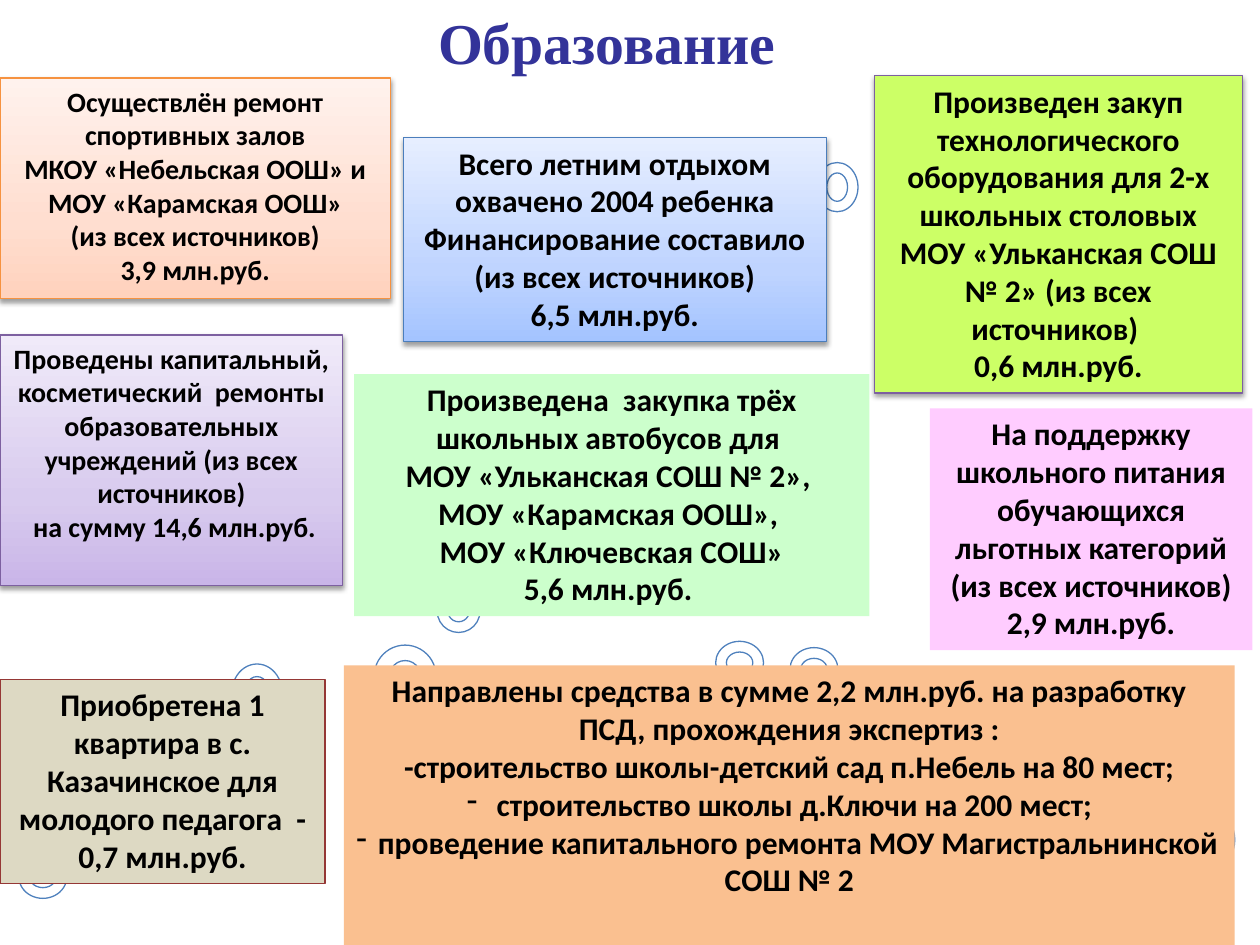
"""Build the education spending slide."""
from copy import deepcopy

from lxml import etree
from pptx import Presentation
from pptx.dml.color import RGBColor
from pptx.enum.shapes import MSO_SHAPE
from pptx.enum.text import MSO_ANCHOR, MSO_AUTO_SIZE, PP_ALIGN
from pptx.oxml.ns import qn
from pptx.util import Inches, Pt

RECT, DONUT = MSO_SHAPE.RECTANGLE, MSO_SHAPE.DONUT
TOP, CENTER, NO_FIT = MSO_ANCHOR.TOP, PP_ALIGN.CENTER, MSO_AUTO_SIZE.NONE

BLACK = RGBColor(0x00, 0x00, 0x00)
WHITE = RGBColor(0xFF, 0xFF, 0xFF)
INDIGO = RGBColor(0x33, 0x33, 0x99)
RING_BLUE = RGBColor(0x4F, 0x81, 0xBD)
BLUE = RGBColor(0x4B, 0x7E, 0xBC)
ORANGE = RGBColor(0xF6, 0x92, 0x40)
PURPLE = RGBColor(0x7D, 0x60, 0xA0)
DARK_RED = RGBColor(0x95, 0x37, 0x35)
LIME = RGBColor(0xCC, 0xFF, 0x66)
MINT = RGBColor(0xCC, 0xFF, 0xCC)
PINK = RGBColor(0xFF, 0xCC, 0xFF)
PEACH = RGBColor(0xFA, 0xC0, 0x90)
TAN = RGBColor(0xDD, 0xD9, 0xC3)
ORANGE_FADE = [RGBColor(0xFF, 0xD2, 0xBD), RGBColor(0xFF, 0xDE, 0xD0), RGBColor(0xFF, 0xF2, 0xED)]
PURPLE_FADE = [RGBColor(0xC9, 0xB5, 0xE8), RGBColor(0xD8, 0xCB, 0xEE), RGBColor(0xF0, 0xEA, 0xF9)]
BLUE_FADE = [RGBColor(0xA4, 0xC4, 0xFF), RGBColor(0xBF, 0xD4, 0xFF), RGBColor(0xE6, 0xEE, 0xFF)]
FADE_POSITIONS = (0, 0.35, 1)

TITLE = "Образование"
RINGS = [
    (1.84, 5.27, 0.4, 0.46), (2.97, 5.12, 0.49, 0.49), (6.48, 1.29, 0.33, 0.39),
    (6.27, 5.14, 0.38, 0.34), (5.68, 5.09, 0.38, 0.34), (3.47, 4.68, 0.34, 0.34),
    (0.15, 6.79, 0.38, 0.34), (9.3, 6.4, 0.5, 0.53),
]
BULLET = "• "
CARDS = [
    dict(at=(0, 0.62, 3.1, 1.75), fill=ORANGE_FADE, line=ORANGE, shadow=True, size=16, text=[
        "Осуществлён ремонт спортивных залов",
        "МКОУ «Небельская ООШ» и МОУ «Карамская ООШ»",
        "(из всех источников)",
        "3,9 млн.руб."]),
    dict(at=(6.94, 0.6, 2.92, 2.52), fill=LIME, line=PURPLE, shadow=True, size=18, text=[
        "Произведен закуп технологического оборудования для 2-х школьных столовых "
        "МОУ «Ульканская СОШ № 2» (из всех источников) ",
        "0,6 млн.руб."]),
    dict(at=(0, 2.66, 2.72, 1.99), fill=PURPLE_FADE, line=PURPLE, shadow=True, size=16, text=[
        "Проведены капитальный, косметический  ремонты образовательных учреждений "
        "(из всех источников)",
        " на сумму 14,6 млн.руб."]),
    dict(at=(3.2, 1.09, 3.36, 1.62), fill=BLUE_FADE, line=BLUE, shadow=True, size=18, text=[
        "Всего летним отдыхом охвачено 2004 ребенка",
        "Финансирование составило (из всех источников)",
        "6,5 млн.руб."]),
    dict(at=(2.73, 5.28, 7.07, 2.22), fill=PEACH, line=None, shadow=False, size=18, text=[
        "Направлены средства в сумме 2,2 млн.руб. на разработку ПСД, прохождения экспертиз :",
        "-строительство школы-детский сад п.Небель на 80 мест;",
        BULLET + "строительство школы д.Ключи на 200 мест;",
        BULLET + " проведение капитального ремонта МОУ Магистральнинской СОШ № 2"]),
    dict(at=(7.38, 3.24, 2.56, 1.92), fill=PINK, line=None, shadow=False, size=18, text=[
        "На поддержку школьного питания обучающихся льготных категорий",
        " (из всех источников) ",
        "2,9 млн.руб."]),
    dict(at=(2.81, 2.97, 4.09, 1.92), fill=MINT, line=None, shadow=False, size=18, text=[
        "Произведена  закупка трёх школьных автобусов для ",
        "МОУ «Ульканская СОШ № 2», ",
        "МОУ «Карамская ООШ», ",
        "МОУ «Ключевская СОШ»",
        "5,6 млн.руб. "]),
    dict(at=(0, 5.39, 2.58, 1.62), fill=TAN, line=DARK_RED, shadow=False, size=18, text=[
        "Приобретена 1 квартира в с. Казачинское для молодого педагога  - 0,7 млн.руб."]),
]


def add_shape(s, kind, at, fill, line):
    sp = s.shapes.add_shape(kind, *map(Inches, at))
    sp.shadow.inherit = False
    if isinstance(fill, list):
        fade(sp, fill)
    else:
        sp.fill.solid()
        sp.fill.fore_color.rgb = fill
    if line is None:
        sp.line.fill.background()
    else:
        sp.line.color.rgb = line
        sp.line.width = Pt(0.75)
    return sp


def fade(sp, colors):
    sp.fill.gradient()
    sp.fill.gradient_angle = 90
    first = next(sp._element.spPr.iter(qn("a:gs")))
    first.addnext(deepcopy(first))
    for stop, position, color in zip(sp.fill.gradient_stops, FADE_POSITIONS, colors):
        stop.position = position
        stop.color.rgb = color


def add_shadow(sp):
    effects = sp._element.spPr.find(qn("a:effectLst"))
    shadow = etree.SubElement(effects, qn("a:outerShdw"), blurRad=str(Pt(3.1)),
                              dist=str(Pt(1.6)), dir="5400000", rotWithShape="0")
    color = etree.SubElement(shadow, qn("a:srgbClr"), val=str(BLACK))
    etree.SubElement(color, qn("a:alpha"), val="38000")


def write(sp, lines, font, size, color):
    tf = sp.text_frame
    tf.word_wrap = True
    tf.auto_size = NO_FIT
    tf.vertical_anchor = TOP
    for i, line in enumerate(lines):
        p = tf.paragraphs[0] if i == 0 else tf.add_paragraph()
        p.text = line.removeprefix(BULLET)
        p.alignment = CENTER
        if line.startswith(BULLET):
            etree.SubElement(p._p.get_or_add_pPr(), qn("a:buChar"), char="-")
        for r in p.runs:
            r.font.name = font
            r.font.size = Pt(size)
            r.font.bold = True
            r.font.color.rgb = color


def main():
    prs = Presentation()
    prs.slide_width, prs.slide_height = Inches(10), Inches(7.5)
    s = prs.slides.add_slide(prs.slide_layouts[5])

    title = s.shapes.title
    title.left, title.top, title.width, title.height = map(Inches, (0, 0, 9.63, 0.66))
    write(title, [TITLE], "Times New Roman", 33, INDIGO)

    for at in RINGS:
        ring = add_shape(s, DONUT, at, WHITE, RING_BLUE)
        color = next(ring._element.spPr.iter(qn("a:srgbClr")))
        etree.SubElement(color, qn("a:alpha"), val="60000")

    for card in CARDS:
        sp = add_shape(s, RECT, card["at"], card["fill"], card["line"])
        if card["shadow"]:
            add_shadow(sp)
        write(sp, card["text"], "Calibri", card["size"], BLACK)

    prs.save("out.pptx")


if __name__ == "__main__":
    main()
